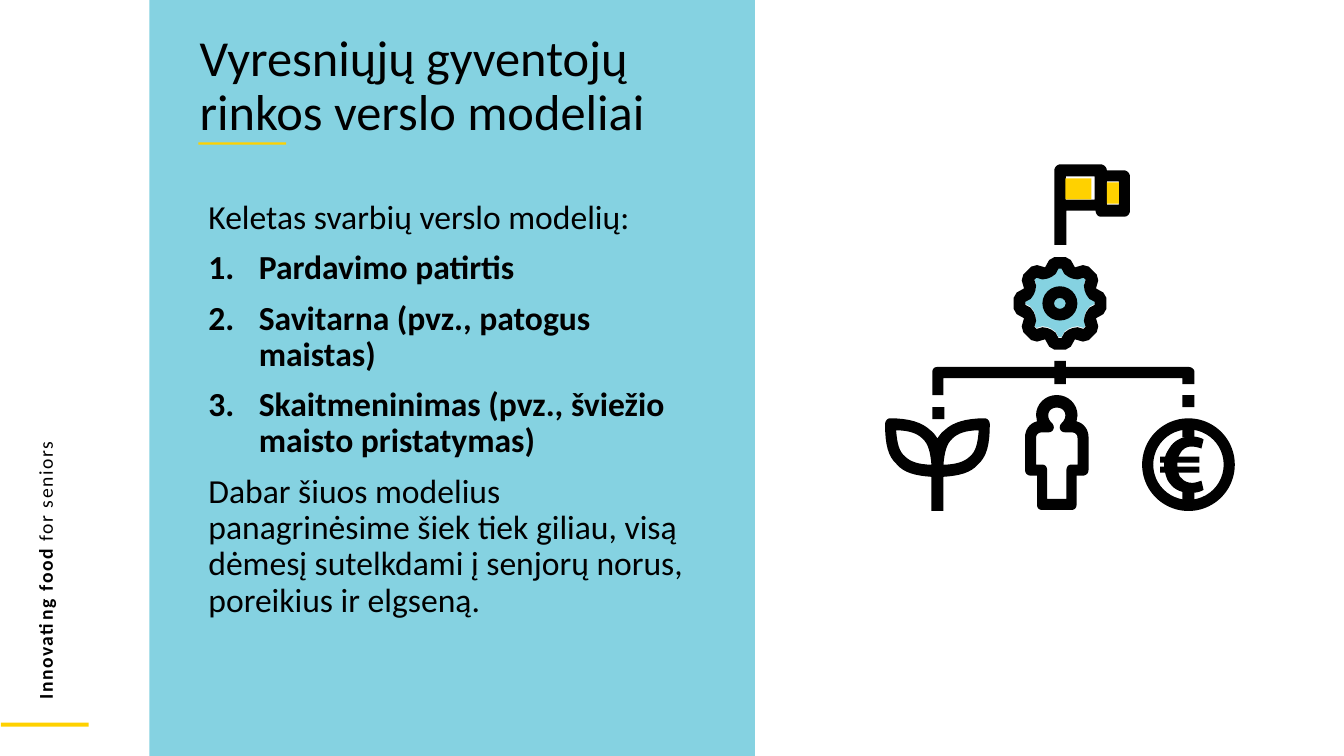
"""Builds a slide on business models for the senior market, with a hierarchy icon."""
import math
from dataclasses import dataclass

from lxml import etree
from pptx import Presentation
from pptx import util as u
from pptx.dml.color import RGBColor
from pptx.enum import shapes, text
from pptx.oxml.ns import qn


@dataclass(frozen=True)
class Theme:
    font: str = "Calibri"
    black: str = "000000"
    ink: str = "010101"
    teal: str = "85D2E1"
    yellow: str = "FFD100"
    title: int = 36
    body: int = 24
    tagline: int = 14


theme = Theme()
RECT, DONUT = shapes.MSO_SHAPE.RECTANGLE, shapes.MSO_SHAPE.DONUT


def paint(sp, color):
    sp.shadow.inherit = False
    sp.fill.solid()
    sp.fill.fore_color.rgb = RGBColor.from_string(color)
    sp.line.fill.background()


def trace(steps, axis=None):
    """Turn points and cubic curves (six numbers) into points, mirrored at axis if given."""
    points = []
    for step in steps:
        if len(step) == 2:
            points.append(step)
            continue
        (x0, y0), (x1, y1, x2, y2, x3, y3) = points[-1], step
        for i in range(1, 9):
            t = i / 8
            a, b, c, d = (1 - t) ** 3, 3 * t * (1 - t) ** 2, 3 * t * t * (1 - t), t ** 3
            points.append((a * x0 + b * x1 + c * x2 + d * x3,
                           a * y0 + b * y1 + c * y2 + d * y3))
    if axis is not None:
        points += [(2 * axis - x, y) for x, y in reversed(points)]
    return points


prs = Presentation()
prs.slide_width, prs.slide_height = u.Pt(960), u.Pt(540)
s = prs.slides.add_slide(prs.slide_layouts[5])

for color, box in (
    (theme.teal, (106.6, 0, 432.7, 540)),
    (theme.yellow, (0.7, 516.2, 62.6, 2.9)),
    (theme.yellow, (141.8, 101.7, 62.6, 1.6)),
):
    paint(s.shapes.add_shape(RECT, *map(u.Pt, box)), color)

title = s.shapes.title
s.shapes._spTree.append(title._element)
title.text_frame.text = "Vyresniųjų gyventojų rinkos verslo modeliai"
tagline = s.shapes.add_textbox(0, 0, 0, 0)
tagline.rotation = 270
p = tagline.text_frame.paragraphs[0]
for words, bold in (("Innovating food ", True), ("for seniors", False)):
    r = p.add_run()
    r.text = words
    r.font.bold = bold
    r._r.get_or_add_rPr().set("spc", "110")

models = s.shapes.add_textbox(0, 0, 0, 0)
for i, (words, numbered) in enumerate((
    ("Keletas svarbių verslo modelių:", False),
    ("Pardavimo patirtis", True),
    ("Savitarna (pvz., patogus maistas)", True),
    ("Skaitmeninimas (pvz., šviežio maisto pristatymas)", True),
    ("Dabar šiuos modelius panagrinėsime šiek tiek giliau, visą dėmesį "
     "sutelkdami į senjorų norus, poreikius ir elgseną.", False),
)):
    tf = models.text_frame
    p = tf.add_paragraph() if i else tf.paragraphs[0]
    p.text = words
    p.space_before = u.Pt(10 if i else 0)
    if numbered:
        pPr = p._p.get_or_add_pPr()
        pPr.set("marL", str(u.Pt(36)))
        pPr.set("indent", str(-u.Pt(36)))
        etree.SubElement(pPr, qn("a:buFont")).set("typeface", "+mj-lt")
        etree.SubElement(pPr, qn("a:buAutoNum")).set("type", "arabicPeriod")
    p.runs[0].font.bold = numbered

for sp, box, size, spacing, anchor in (
    (title, (135.4, 18, 371.5, 88.6), theme.title, 0.9, text.MSO_ANCHOR.MIDDLE),
    (tagline, (-239, 223.2, 542.9, 24.5), theme.tagline, 1, text.MSO_ANCHOR.TOP),
    (models, (141.8, 139.7, 363.6, 356.4), theme.body, 0.9, text.MSO_ANCHOR.TOP),
):
    sp.left, sp.top, sp.width, sp.height = map(u.Pt, box)
    tf = sp.text_frame
    tf.word_wrap = True
    tf.auto_size = text.MSO_AUTO_SIZE.NONE
    tf.vertical_anchor = anchor
    for p in tf.paragraphs:
        p.alignment = text.PP_ALIGN.LEFT
        p.line_spacing = spacing
        for r in p.runs:
            r.font.name, r.font.size = theme.font, u.Pt(size)
            r.font.color.rgb = RGBColor.from_string(theme.black)

gear_x, gear_y = 757.2, 216.7
gear_rim, gear_core = [
    [(gear_x + radius * math.sin(math.radians(45 * tooth + angle)),
      gear_y - radius * math.cos(math.radians(45 * tooth + angle)))
     for tooth in range(8) for angle, radius in profile]
    for profile in (
        ((-14, 31.9), (-7, 33.3), (7, 33.3), (14, 31.9), (22.5, 27.8)),
        ((-18, 19.8), (-8.5, 21.2), (-2.5, 24.8), (2.5, 24.8), (8.5, 21.2), (18, 19.8)),
    )
]

person_x, plant_x = 754.9, 669.6
person = trace([
    (754.9, 282.2), (763, 282.2, 769.7, 288.5, 769.7, 296.6), (769, 301),
    (774.7, 302.4, 777.6, 307.4, 777.6, 312.5), (777.6, 335.5),
    (777.6, 338.4, 775.5, 339.8, 773.3, 339.8), (769, 339.8), (769, 360.7),
    (769, 362.9, 767.5, 364.3, 765.4, 364.3)], person_x)
person_inside = trace([
    (754.9, 291.2), (758.5, 291.2, 761, 293.5, 761, 296.6),
    (761, 299, 760, 300.5, 758.9, 301.7), (755.5, 304.5, 757, 308.9, 761, 308.9),
    (765.4, 308.9), (768, 308.9, 769.7, 310.3, 769.7, 313), (769.7, 331.9),
    (765.4, 331.9), (763.2, 331.9, 761.8, 333.4, 761.8, 336), (761.8, 356.4)], person_x)
plant = trace([
    (673.9, 365), (673.9, 340.6), (685.4, 339.8, 693.4, 337.7, 698.4, 331.9),
    (704.9, 326.2, 707, 317.5, 707, 303.1), (707, 301, 705.6, 298.8, 703.4, 298.8),
    (689.8, 298.8, 680.4, 301.7, 674.6, 307.4), (672.5, 308.9, 671, 311, 669.6, 313.2)],
    plant_x)
leaf = trace([
    (673.9, 331.9), (674.6, 323.3, 676.1, 316.8, 680.4, 313.2),
    (684, 309.6, 689.8, 307.4, 699.1, 307.4), (698.4, 316.8, 697, 322.6, 692.6, 326.2),
    (689, 329.8, 682.6, 331.9, 673.9, 331.9)])
left_leaf = [(2 * plant_x - x, y) for x, y in leaf]
tree = trace([
    (853.2, 274.3), (844.6, 274.3), (844.6, 270), (761.4, 270), (761.4, 274.3),
    (753.1, 274.3), (753.1, 270), (673.9, 270), (673.9, 282.2), (666, 282.2),
    (666, 265.7), (666, 263.5, 667.6, 262.1, 669.6, 262.1), (753.1, 262.1),
    (753.1, 257.8), (761.4, 257.8), (761.4, 262.1), (849, 262.1),
    (851, 262.1, 853.2, 263.5, 853.2, 265.7)])
flag = trace([
    (753.1, 175), (753.1, 121.7), (753.1, 119.5, 755.3, 117.4, 757.4, 117.4),
    (786.2, 117.4), (788.4, 117.4, 790.6, 119.5, 790.6, 121.7), (802.8, 121.7),
    (805, 121.7, 807.1, 123.8, 807.1, 126), (807.1, 150.5),
    (807.1, 152.6, 805.7, 154.8, 802.8, 154.8), (786.2, 154.8),
    (784.1, 154.8, 782.6, 152.6, 782.6, 150.5), (761.8, 150.5), (761.8, 175)])
flag_holes = [[(x, y), (x, y2), (x2, y2), (x2, y)] for x, y, x2, y2 in (
    (761.4, 126, 781.9, 142.6), (790.6, 129.6, 799.2, 146.2))]
euro = trace([
    (859.7, 349.9), (857.5, 351.4, 853.9, 352.1, 850.3, 352.1),
    (844.6, 352.1, 838.8, 349.9, 835.9, 345.6), (833.8, 343.4, 833, 340.6, 832.3, 337.7),
    (828.7, 337.7), (828.7, 333.4), (831.6, 333.4), (831.6, 330.5), (828.7, 330.5),
    (828.7, 326.2), (832.3, 326.2), (833, 323.3, 835.2, 320.4, 836.6, 318.2),
    (840.2, 313.9, 845.3, 311.8, 850.3, 311.8), (854.6, 311.8, 857.5, 312.5, 859.7, 313.9),
    (858.2, 320.4), (856.1, 319.7, 853.9, 319, 851, 319),
    (848.9, 319, 846, 319.7, 843.8, 322.6), (841.7, 326.2), (856.8, 326.2), (856.8, 330.5),
    (841, 330.5), (841, 333.4), (856.8, 333.4), (856.8, 337.7), (841.7, 337.7),
    (842.4, 339.1, 842.4, 340.6, 843.8, 341.3), (846, 344.2, 848.9, 344.9, 851.8, 344.9),
    (854.6, 344.9, 857.5, 343.4, 858.2, 343.4)])

for color, contours in (
    (theme.teal, [[(x, y - 0.7) for x, y in gear_core]]),
    (theme.ink, [gear_rim, gear_core]),
    (theme.ink, [person, person_inside]),
    (theme.ink, [plant, leaf, left_leaf]),
    (theme.ink, [tree]),
    (theme.ink, [flag, *flag_holes]),
    (theme.black, [euro]),
):
    outlines = [[(u.Pt(x), u.Pt(y)) for x, y in contour] for contour in contours]
    pen = s.shapes.build_freeform(*outlines[0][0])
    pen.add_line_segments(outlines[0][1:])
    for hole in outlines[1:]:
        pen.move_to(*hole[0])
        pen.add_line_segments(hole[1:])
    paint(pen.convert_to_shape(), color)

for kind, color, box, ring in (
    (DONUT, theme.ink, (744.6, 204.5, 25, 24.5), 0.34),
    (DONUT, theme.ink, (815.8, 298.8, 66.2, 66.2), 0.12),
    (RECT, theme.ink, (844.6, 305, 8.6, 7.5), None),
    (RECT, theme.ink, (844.6, 348.5, 8.6, 9), None),
    (RECT, theme.ink, (666, 290.9, 8.6, 8.6), None),
    (RECT, theme.ink, (844.6, 282.2, 8.6, 8.6), None),
    (RECT, theme.yellow, (761, 127.4, 18.7, 15.1), None),
    (RECT, theme.yellow, (790.6, 130.3, 8.6, 15.1), None),
):
    sp = s.shapes.add_shape(kind, *map(u.Pt, box))
    paint(sp, color)
    if ring:
        sp.adjustments[0] = ring

prs.save("out.pptx")
